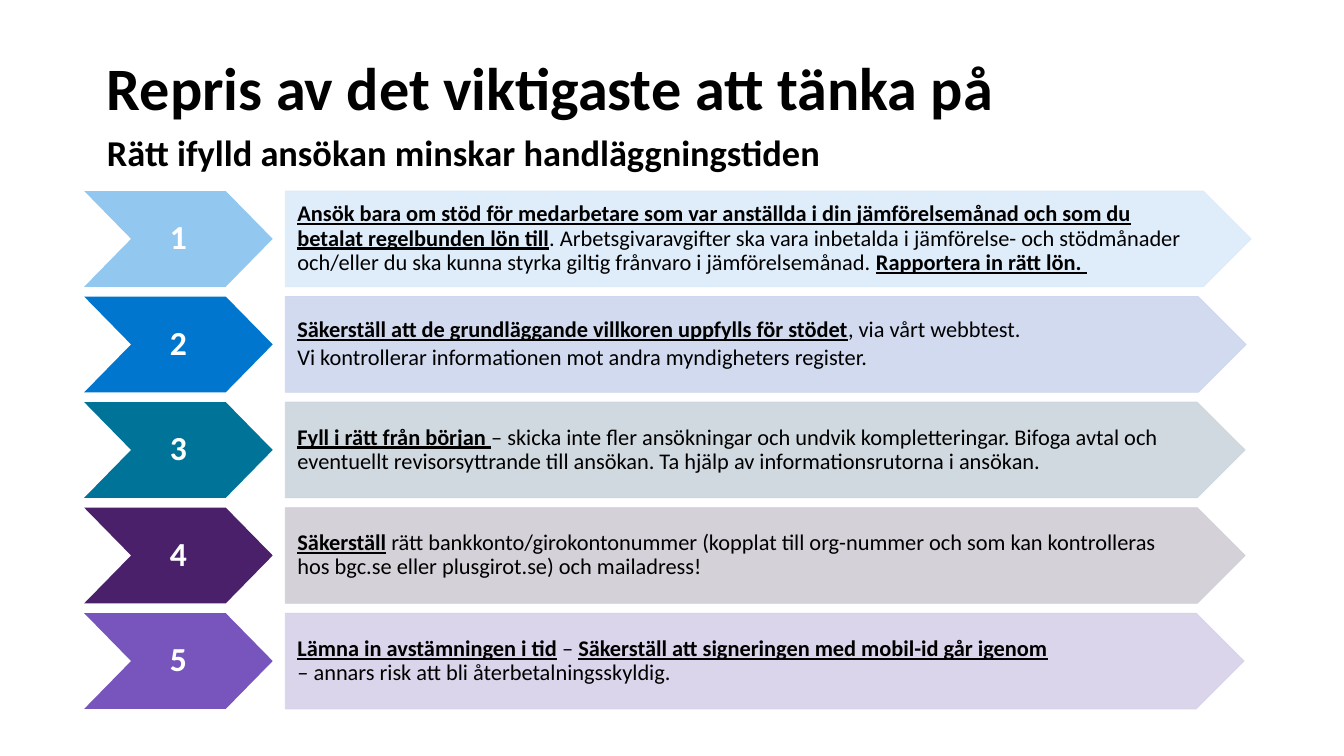
from lxml import etree
from pptx import Presentation
from pptx import util as u
from pptx.dml.color import RGBColor
from pptx.enum import shapes, text
from pptx.oxml.ns import qn

BLACK = RGBColor(0x00, 0x00, 0x00)
WHITE = RGBColor(0xFF, 0xFF, 0xFF)
SKY = RGBColor(0x92, 0xC8, 0xEF)
BLUE = RGBColor(0x00, 0x76, 0xCF)
TEAL = RGBColor(0x00, 0x73, 0x98)
PLUM = RGBColor(0x49, 0x20, 0x69)
VIOLET = RGBColor(0x78, 0x54, 0xBD)
PALE_SKY = RGBColor(0xDC, 0xEB, 0xF9)
PALE_BLUE = RGBColor(0xCC, 0xD6, 0xED)
PALE_TEAL = RGBColor(0xCC, 0xD5, 0xDD)
PALE_PLUM = RGBColor(0xD0, 0xCD, 0xD4)
PALE_VIOLET = RGBColor(0xD6, 0xD1, 0xE8)

TOP, STEP, HIGH = 1.895, 1.047, 0.95

STEPS = [
    (SKY, PALE_SKY, 9.58, 0.39, [[
        ("Ansök bara om stöd för medarbetare som var anställda i din "
         "jämförelsemånad och som du betalat regelbunden lön till", True),
        (". Arbetsgivaravgifter ska vara inbetalda i jämförelse- och "
         "stödmånader och/eller du ska kunna styrka giltig frånvaro i "
         "jämförelsemånad. ", False),
        ("Rapportera in rätt lön. ", True)]]),
    (BLUE, PALE_BLUE, 9.53, 0.36, [
        [("Säkerställ att de grundläggande villkoren uppfylls för stödet", True),
         (", via vårt webbtest.", False)],
        [("Vi kontrollerar informationen mot andra myndigheters register.", False)]]),
    (TEAL, PALE_TEAL, 9.52, 0.36, [[
        ("Fyll i rätt från början ", True),
        ("– skicka inte fler ansökningar och undvik kompletteringar. "
         "Bifoga avtal och eventuellt revisorsyttrande till ansökan. "
         "Ta hjälp av informationsrutorna i ansökan.", False)]]),
    (PLUM, PALE_PLUM, 9.52, 0.36, [[
        ("Säkerställ", True),
        (" rätt bankkonto/girokontonummer (kopplat till org-nummer och som "
         "kan kontrolleras hos bgc.se eller plusgirot.se) och mailadress!", False)]]),
    (VIOLET, PALE_VIOLET, 9.51, 0.36, [[
        ("Lämna in avstämningen i tid", True),
        (" – ", False),
        ("Säkerställ att signeringen med mobil-id går igenom", True),
        ("\n– annars risk att bli återbetalningsskyldig.", False)]]),
]


class Deck:
    face = "Calibri"

    def __init__(self):
        self.prs = Presentation()
        self.prs.slide_width = u.Inches(13.33)
        self.prs.slide_height = u.Inches(7.5)
        self.slide = self.prs.slides.add_slide(self.prs.slide_layouts[1])

    def style(self, run, size, color, bold=True, line=False):
        font = run.font
        font.name, font.size, font.bold = self.face, u.Pt(size), bold
        font.underline = line
        font.color.rgb = color

    def frame(self, shape, pads, anchor):
        box = shape.text_frame
        box.word_wrap = True
        box.auto_size = text.MSO_AUTO_SIZE.NONE
        box.vertical_anchor = anchor
        (box.margin_left, box.margin_top,
         box.margin_right, box.margin_bottom) = [u.Inches(p) for p in pads]
        return box

    def holder(self, index, words, top, height, size, anchor):
        shape = self.slide.placeholders[index]
        shape.left, shape.top = u.Inches(1.06), u.Inches(top)
        shape.width, shape.height = u.Inches(9.4), u.Inches(height)
        box = self.frame(shape, (0, 0, 0, 0), anchor)
        box.text = words
        para = box.paragraphs[0]
        props = para._p.get_or_add_pPr()
        props.set("marL", "0")
        props.set("indent", "0")
        etree.SubElement(props, qn("a:buNone"))
        para.alignment = text.PP_ALIGN.LEFT
        para.line_spacing = 0.9 if index == 0 else 1.0
        para.space_before = u.Pt(0)
        self.style(para.runs[0], size, BLACK)

    def arrow(self, kind, left, top, width, color, bend):
        shape = self.slide.shapes.add_shape(
            kind, u.Inches(left), u.Inches(top), u.Inches(width), u.Inches(HIGH))
        shape.shadow.inherit = False
        shape.adjustments[0] = bend
        shape.fill.solid()
        shape.fill.fore_color.rgb = color
        shape.line.fill.background()
        return shape

    def badge(self, number, top, color):
        shape = self.arrow(shapes.MSO_SHAPE.CHEVRON, 0.835, top, 1.87, color, 0.49)
        box = self.frame(shape, (0.56, 0.05, 0.56, 0.05), text.MSO_ANCHOR.MIDDLE)
        box.text = str(number)
        para = box.paragraphs[0]
        para.alignment = text.PP_ALIGN.CENTER
        para.line_spacing = 0.9
        self.style(para.runs[0], 24, WHITE)

    def banner(self, top, width, color, pad, paras):
        shape = self.arrow(shapes.MSO_SHAPE.PENTAGON, 2.83, top, width, color, 0.5)
        shape.line.color.rgb = color
        shape.line.width = u.Pt(0.5)
        for tone in shape._element.spPr.iter(qn("a:srgbClr")):
            etree.SubElement(tone, qn("a:alpha")).set("val", "90000")
        box = self.frame(shape, (0.12, 0.13, pad, 0.13), text.MSO_ANCHOR.MIDDLE)
        for place, parts in enumerate(paras):
            para = box.add_paragraph() if place else box.paragraphs[0]
            para.alignment = text.PP_ALIGN.LEFT
            para.line_spacing = 0.9
            para.space_after = u.Pt(2.4)
            for words, strong in parts:
                if words.startswith("\n"):
                    para.add_line_break()
                run = para.add_run()
                run.text = words.lstrip("\n")
                self.style(run, 16, BLACK, strong, strong)


def main():
    deck = Deck()
    deck.holder(0, "Repris av det viktigaste att tänka på",
                0.09, 1.14, 43, text.MSO_ANCHOR.BOTTOM)
    deck.holder(1, "Rätt ifylld ansökan minskar handläggningstiden",
                1.29, 0.52, 26, text.MSO_ANCHOR.TOP)
    for row, (dark, pale, width, pad, paras) in enumerate(STEPS):
        top = TOP + row * STEP
        deck.banner(top, width, pale, pad, paras)
        deck.badge(row + 1, top, dark)
    deck.prs.save("out.pptx")


if __name__ == "__main__":
    main()
